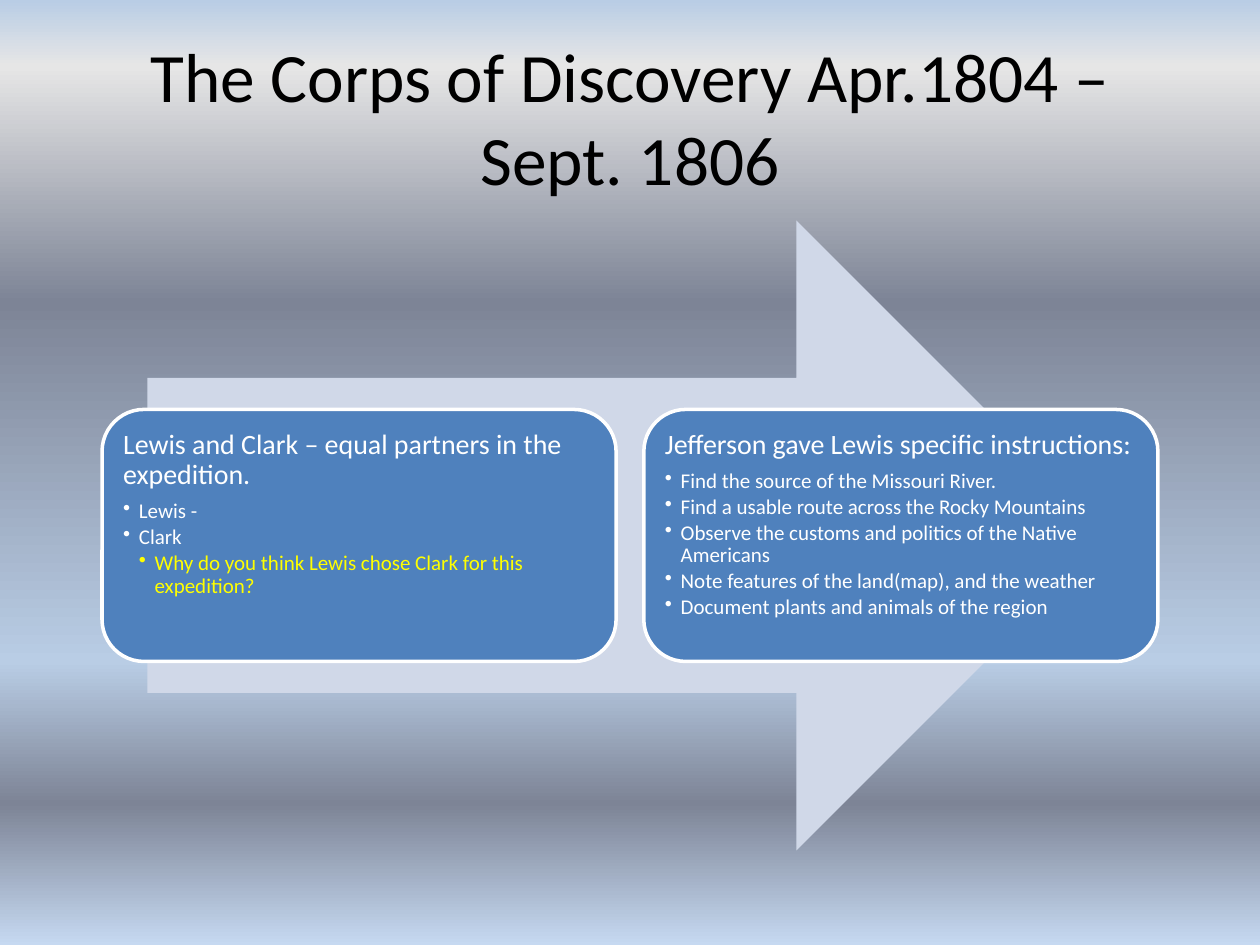
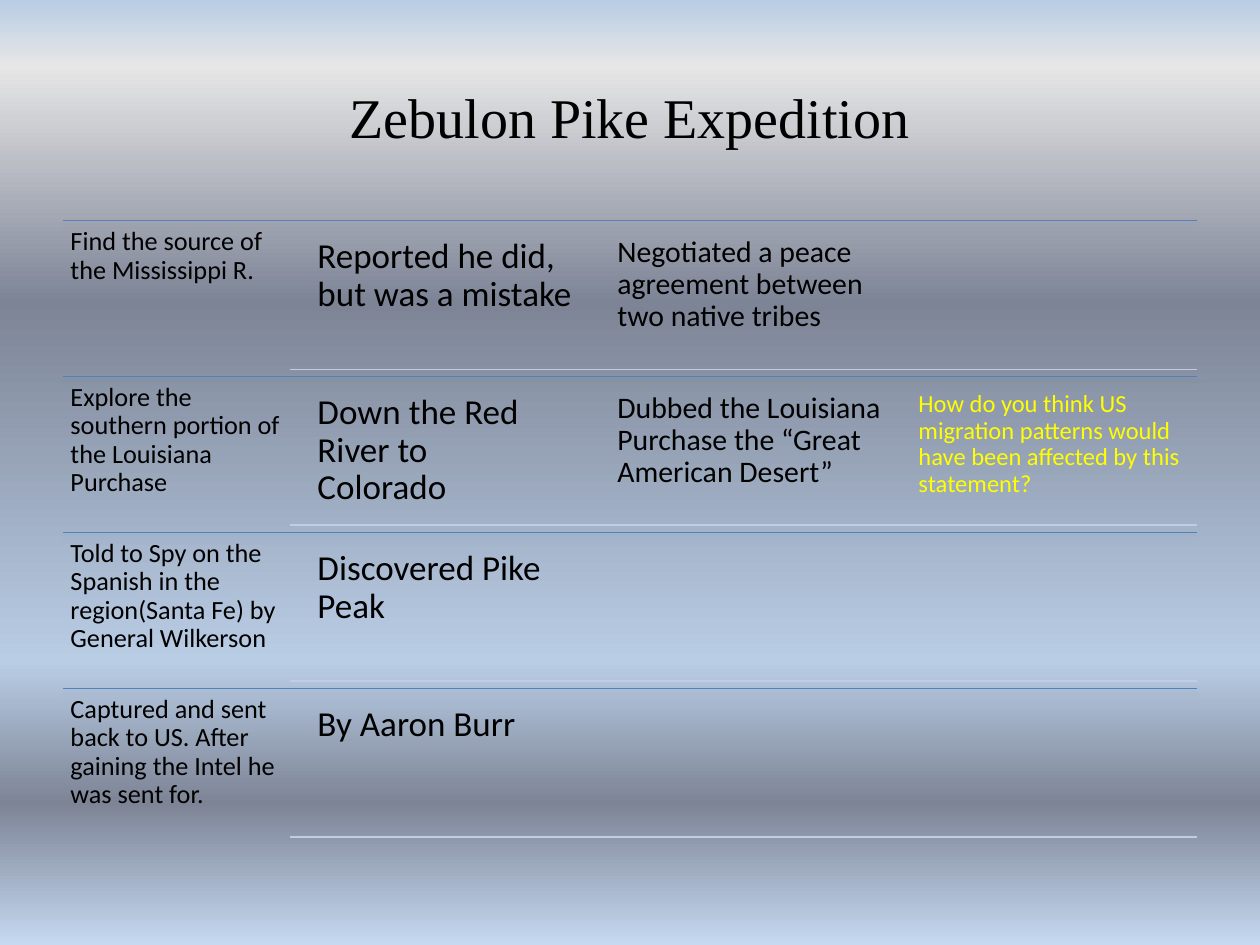
import pptx
import pptx.util
import pptx.dml.color
import pptx.enum.shapes
import pptx.enum.text
import lxml.etree

Inches = pptx.util.Inches
Pt = pptx.util.Pt
shapes = pptx.enum.shapes.MSO_SHAPE
hues = {
    "black": "000000", "white": "FFFFFF", "yellow": "FFFF00",
    "blue": "4F81BD", "pale": "D0D8E8", "rule": "C2CDE1",
    "sky": "B9CDE5", "fog": "E6E6E6", "slate": "7D8496", "ice": "C6D9F1",
}
rgb = {name: pptx.dml.color.RGBColor.from_string(hue) for name, hue in hues.items()}
space = "http://schemas.openxmlformats.org/drawingml/2006/main"
tag = "{" + space + "}"


def write(frame, text, size, hue="black", font="Calibri", level=0, after=0.35, first=False):
    para = frame.paragraphs[0] if first else frame.add_paragraph()
    para.line_spacing = 0.9
    para.space_after = Pt(size * after)
    if level:
        props = para._p.get_or_add_pPr()
        props.set("marL", str(Inches(0.125 * level)))
        props.set("indent", str(-Inches(0.125)))
        lxml.etree.SubElement(props, tag + "buChar").set("char", "•")
    for spot, part in enumerate(text.split("\n")):
        if spot:
            para.add_line_break()
        run = para.add_run()
        run.text = part
        run.font.name = font
        run.font.size = Pt(size)
        run.font.color.rgb = rgb[hue]
    return para


def box(slide, left, top, width, height, inset):
    frame = slide.shapes.add_textbox(
        Inches(left), Inches(top), Inches(width), Inches(height)).text_frame
    frame.word_wrap = True
    frame.margin_left = frame.margin_right = Inches(inset)
    frame.margin_top = frame.margin_bottom = Inches(inset)
    return frame


deck = pptx.Presentation()
deck.slide_width = Inches(10)
deck.slide_height = Inches(7.5)

master = deck.slide_master
fill = master.background.fill
fill.gradient()
fill.gradient_angle = 270
stops = next(master.element.iter(tag + "gsLst"))
for stop in list(stops):
    stops.remove(stop)
for place, hue in [(0, "sky"), (7, "fog"), (32, "slate"), (70, "sky"), (85, "slate"), (100, "ice")]:
    stop = lxml.etree.SubElement(stops, tag + "gs", pos=str(place * 1000))
    lxml.etree.SubElement(stop, tag + "srgbClr", val=hues[hue])

slides = []
for text, size, font in [
    ("The Corps of Discovery Apr.1804 – Sept. 1806", 39.6, "Calibri"),
    ("Zebulon Pike Expedition", 32, "Times New Roman"),
]:
    slide = deck.slides.add_slide(deck.slide_layouts[6])
    frame = box(slide, 0.5, 0.3, 9, 1.25, 0.1)
    frame.margin_top = frame.margin_bottom = Inches(0.05)
    frame.vertical_anchor = pptx.enum.text.MSO_ANCHOR.MIDDLE
    para = write(frame, text, size, font=font, after=0, first=True)
    para.line_spacing = 1.0
    para.alignment = pptx.enum.text.PP_ALIGN.CENTER
    slides.append(slide)
corps, pike = slides

arrow = corps.shapes.add_shape(
    shapes.RIGHT_ARROW, Inches(1.17), Inches(1.75), Inches(7.65), Inches(5))
arrow.shadow.inherit = False
arrow.fill.solid()
arrow.fill.fore_color.rgb = rgb["pale"]
arrow.line.fill.background()

cards = [
    ("Lewis and Clark – equal partners in the expedition.", [
        ("Lewis -", 1, "white"),
        ("Clark", 1, "white"),
        ("Why do you think Lewis chose Clark for this expedition?", 2, "yellow"),
    ]),
    ("Jefferson gave Lewis specific instructions:", [
        ("Find the source of the Missouri River.", 1, "white"),
        ("Find a usable route across the Rocky Mountains", 1, "white"),
        ("Observe the customs and politics of the Native Americans", 1, "white"),
        ("Note features of the land(map), and the weather", 1, "white"),
        ("Document plants and animals of the region", 1, "white"),
    ]),
]
for col, (head, points) in enumerate(cards):
    card = corps.shapes.add_shape(
        shapes.ROUNDED_RECTANGLE,
        Inches(0.81 + 4.3 * col), Inches(3.25), Inches(4.08), Inches(2))
    card.shadow.inherit = False
    card.fill.solid()
    card.fill.fore_color.rgb = rgb["blue"]
    card.line.color.rgb = rgb["white"]
    card.line.width = Pt(2)
    frame = card.text_frame
    frame.word_wrap = True
    frame.vertical_anchor = pptx.enum.text.MSO_ANCHOR.TOP
    frame.margin_left = frame.margin_right = Inches(0.07)
    frame.margin_top = frame.margin_bottom = Inches(0.07)
    write(frame, head, 16, "white", first=True).alignment = pptx.enum.text.PP_ALIGN.LEFT
    for text, level, hue in points:
        para = write(frame, text, 12, hue, level=level, after=0.15)
        para.alignment = pptx.enum.text.PP_ALIGN.LEFT

rows = [
    ["Find the source of the Mississippi R.",
     "Reported he did, but was a mistake",
     "Negotiated a peace agreement between two native tribes"],
    ["Explore the southern portion of the Louisiana Purchase",
     "Down the Red River to\nColorado",
     "Dubbed the Louisiana Purchase the “Great American Desert”",
     "How do you think US migration patterns would have been affected by this statement?"],
    ["Told to Spy on the Spanish in the region(Santa Fe) by General Wilkerson",
     "Discovered Pike Peak"],
    ["Captured and sent back to US. After gaining the Intel he was sent for.",
     "By Aaron Burr"],
]
cols = [
    (0.5, 0, 1.8, 1.24, 0.06, 15, "black"),
    (2.44, 0.06, 2.26, 1.12, 0.08, 20, "black"),
    (4.83, 0.06, 2.26, 1.12, 0.07, 17, "black"),
    (7.23, 0.06, 2.26, 1.12, 0.06, 14, "yellow"),
]
pitch = 4.95 / len(rows)
for row, texts in enumerate(rows):
    top = 1.75 + pitch * row
    for left, level, hue in [(0.5, top, "blue"), (2.3, top + 1.18, "rule")]:
        line = pike.shapes.add_connector(
            pptx.enum.shapes.MSO_CONNECTOR.STRAIGHT,
            Inches(left), Inches(level), Inches(9.5), Inches(level))
        line.line.color.rgb = rgb[hue]
        line.line.width = Pt(0.75)
        effect = lxml.etree.SubElement(line._element.spPr, tag + "effectLst")
        shade = lxml.etree.SubElement(
            effect, tag + "outerShdw", blurRad=str(Pt(3.1)), dist=str(Pt(1.6)),
            dir="5400000", rotWithShape="0")
        tint = lxml.etree.SubElement(shade, tag + "srgbClr", val=hues["black"])
        lxml.etree.SubElement(tint, tag + "alpha", val="38000")
    for text, (left, drop, width, height, inset, size, hue) in zip(texts, cols):
        frame = box(pike, left, top + drop, width, height, inset)
        write(frame, text, size, hue, first=True)

deck.save("out.pptx")
